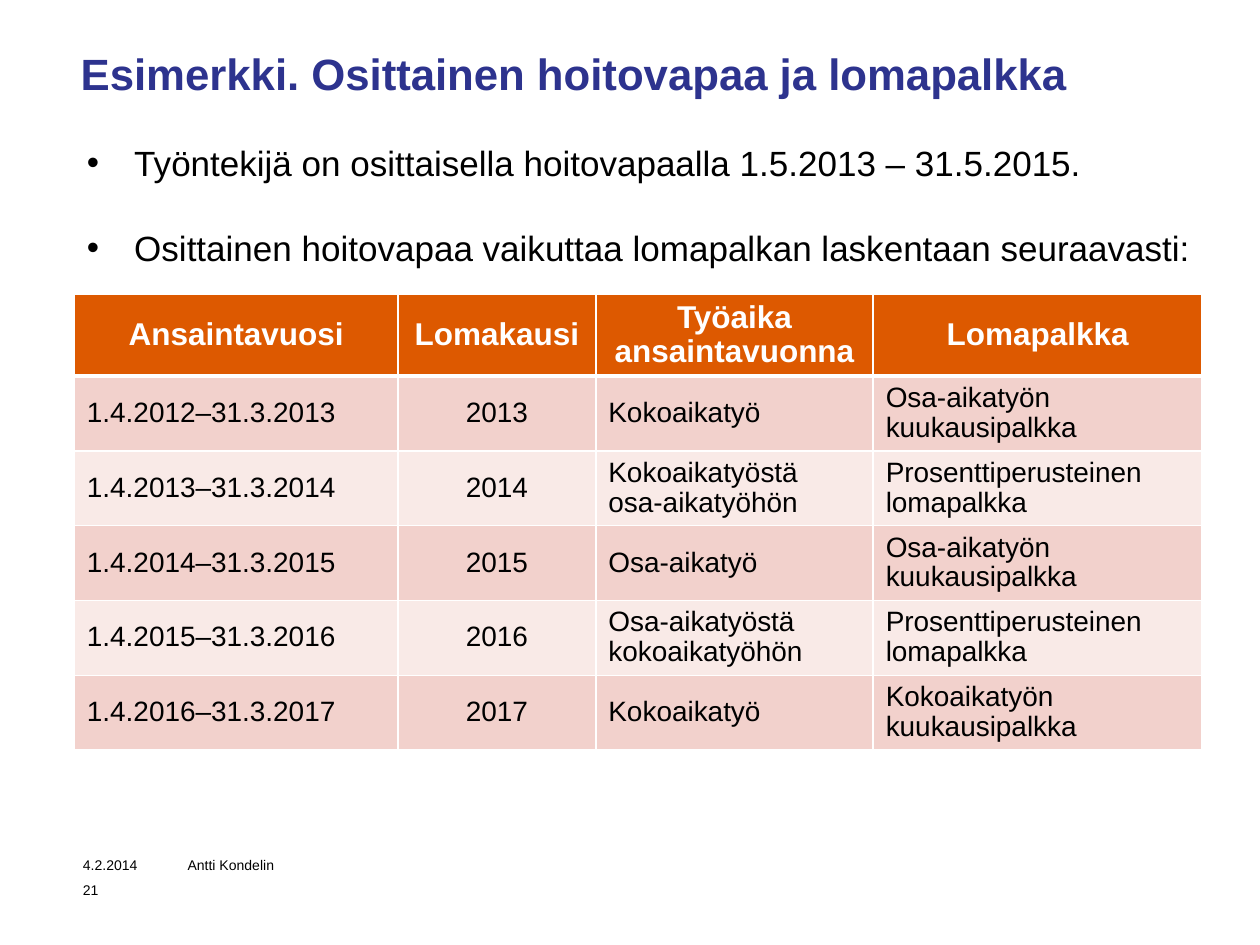
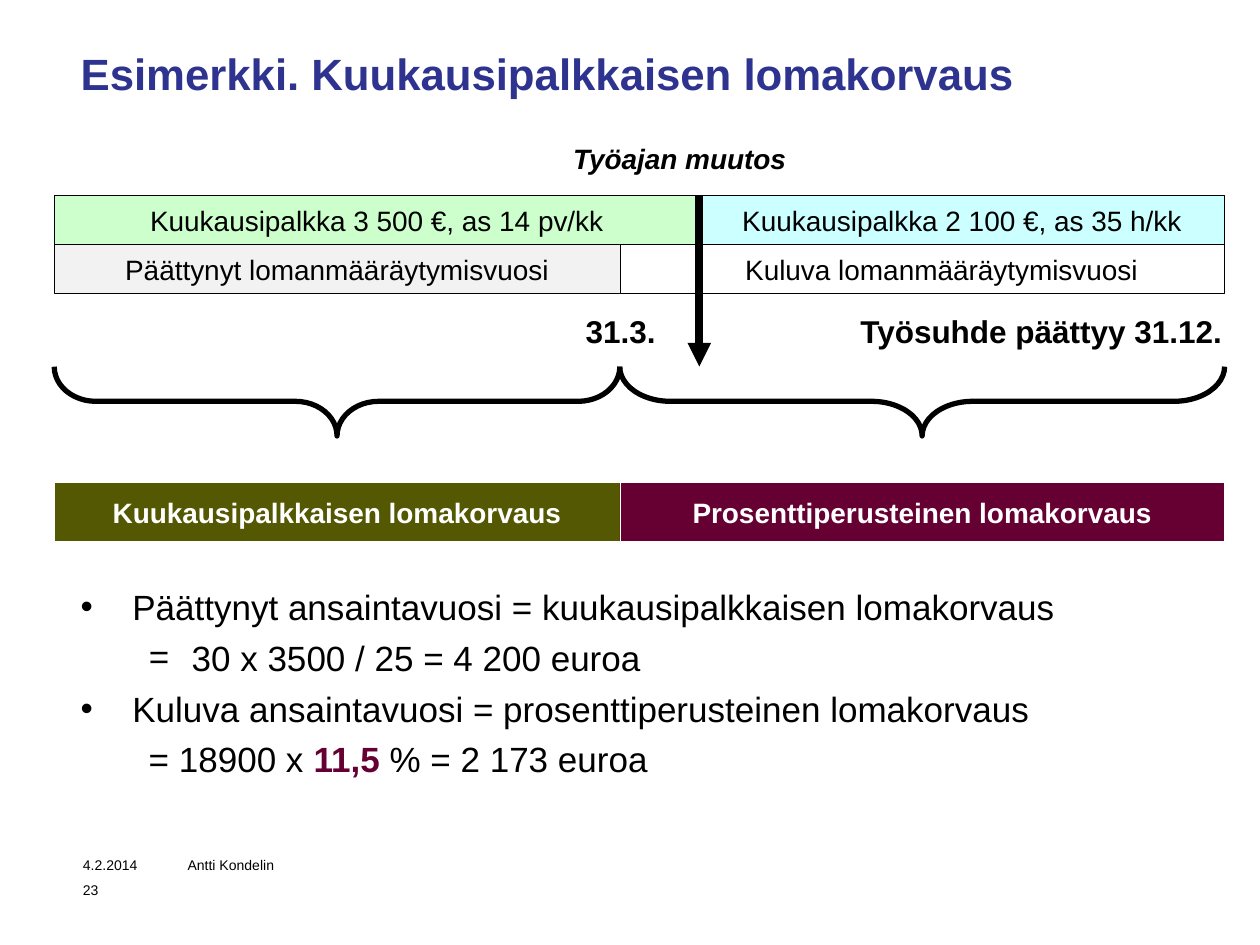
from dataclasses import dataclass
from lxml.etree import SubElement
from pptx import Presentation
from pptx.dml.color import RGBColor
from pptx.enum.shapes import MSO_CONNECTOR, MSO_SHAPE
from pptx.enum.text import MSO_ANCHOR, MSO_AUTO_SIZE, PP_ALIGN
from pptx.oxml import parse_xml
from pptx.oxml.ns import nsdecls, qn
from pptx.util import Pt

FONT = "Arial"
HUES = {
    "title": "2D338E", "ink": "000000", "white": "FFFFFF", "head": "DD5900",
    "odd": "F2D1CC", "even": "F9EAE7", "green": "CCFFCC", "cyan": "CCFFFF",
    "grey": "F2F2F2", "olive": "545802", "wine": "660033",
}
LEFT, SPLIT, CHANGE, RIGHT = 31, 354.2, 399.6, 699.8
BAR_TOP, BAR_HIGH = 111.6, 28.1
BRACE_TOP, BRACE_HIGH = 209.5, 39.6


@dataclass
class Box:
    left: float
    top: float
    width: float
    height: float

    def place(self) -> tuple:
        return Pt(self.left), Pt(self.top), Pt(self.width), Pt(self.height)


@dataclass
class Item:
    texts: list
    indent: float
    hang: float
    mark: str = ""
    level: int = 0
    before: float = 0


@dataclass
class Bar:
    text: str
    start: float
    end: float
    top: float
    high: float
    fill: str
    ink: str = "ink"
    line: str = "ink"
    bold: bool = False
    shift: float = 0


@dataclass
class Label:
    text: str
    box: Box
    size: float
    bold: bool = False
    italic: bool = False


@dataclass
class Brace:
    start: float
    end: float
    curve: float


def color(name: str) -> RGBColor:
    return RGBColor.from_string(HUES[name])


def write(para, text: str, *, size=16, hue="ink", bold=False, italic=False,
          align=PP_ALIGN.LEFT):
    para.alignment = align
    run = para.add_run()
    run.text = text
    font = run.font
    font.name, font.size, font.bold, font.italic = FONT, Pt(size), bold, italic
    font.color.rgb = color(hue)


def fit(frame, anchor=MSO_ANCHOR.TOP, shift=0):
    frame.word_wrap = True
    frame.auto_size = MSO_AUTO_SIZE.NONE
    frame.vertical_anchor = anchor
    frame.margin_left = Pt(7.2 + shift)
    frame.margin_right = Pt(7.2)
    frame.margin_top = frame.margin_bottom = Pt(3.6)


def move(shape, box: Box):
    shape.left, shape.top, shape.width, shape.height = box.place()


def add_label(slide, label: Label):
    frame = slide.shapes.add_textbox(*label.box.place()).text_frame
    fit(frame)
    write(frame.paragraphs[0], label.text, size=label.size, bold=label.bold,
          italic=label.italic)


def add_list(slide, box: Box, items: list):
    body = slide.placeholders[1]
    move(body, box)
    frame = body.text_frame
    fit(frame)
    for num, item in enumerate(items):
        para = frame.add_paragraph() if num else frame.paragraphs[0]
        para.level = item.level
        para.space_before = Pt(item.before)
        props = para._p.get_or_add_pPr()
        props.set("marL", str(Pt(item.indent)))
        props.set("indent", str(Pt(-item.hang)))
        if item.mark:
            SubElement(props, qn("a:buFont"), typeface=FONT)
            SubElement(props, qn("a:buChar"), char=item.mark)
        else:
            SubElement(props, qn("a:buNone"))
        for text, form in item.texts:
            write(para, text, size=20, **form)


def add_page(deck, title: str, number: str):
    slide = deck.slides.add_slide(deck.slide_layouts[1])
    head = slide.shapes.title
    move(head, Box(38.9, 23, 645, 61))
    fit(head.text_frame)
    write(head.text_frame.paragraphs[0], title, size=25, hue="title", bold=True)
    for text, left, top in (("4.2.2014", 40.3, 486),
                            ("Antti Kondelin", 100.1, 486),
                            (number, 40.3, 500.4)):
        add_label(slide, Label(text, Box(left, top, 100, 17.3), 8))
    return slide


def edge_cell(cell, widths: dict):
    props = cell._tc.get_or_add_tcPr()
    for spot, (side, width) in enumerate(widths.items()):
        props.insert(spot, parse_xml(
            f'<a:ln{side} {nsdecls("a")} w="{Pt(width)}"><a:solidFill>'
            f'<a:srgbClr val="{HUES["white"]}"/></a:solidFill></a:ln{side}>'))


def add_grid(slide, box: Box, widths: list, rows: list):
    table = slide.shapes.add_table(len(rows), len(widths), *box.place()).table
    table.horz_banding = False
    for col, width in zip(table.columns, widths):
        col.width = Pt(width)
    for r, row in enumerate(rows):
        head = r == 0
        table.rows[r].height = Pt(46.9 if head else 42.75)
        for c, text in enumerate(row):
            cell = table.cell(r, c)
            cell.vertical_anchor = MSO_ANCHOR.MIDDLE
            cell.fill.solid()
            cell.fill.fore_color.rgb = color(
                "head" if head else "odd" if r % 2 else "even")
            edge_cell(cell, {"L": 1, "R": 1, "T": 3 if r == 1 else 1,
                             "B": 3 if head else 1})
            frame = cell.text_frame
            for num, line in enumerate(text.split("\n")):
                para = frame.add_paragraph() if num else frame.paragraphs[0]
                para.line_spacing = 0.96
                write(para, line, size=18 if head else 16, bold=head,
                      hue="white" if head else "ink",
                      align=PP_ALIGN.CENTER if head or c == 1 else PP_ALIGN.LEFT)


def add_bar(slide, bar: Bar):
    box = Box(bar.start, bar.top, bar.end - bar.start, bar.high)
    shape = slide.shapes.add_shape(MSO_SHAPE.RECTANGLE, *box.place())
    shape.shadow.inherit = False
    shape.fill.solid()
    shape.fill.fore_color.rgb = color(bar.fill)
    shape.line.color.rgb = color(bar.line)
    shape.line.width = Pt(0.25)
    fit(shape.text_frame, MSO_ANCHOR.MIDDLE, bar.shift)
    write(shape.text_frame.paragraphs[0], bar.text, hue=bar.ink, bold=bar.bold,
          align=PP_ALIGN.CENTER)


def add_brace(slide, brace: Brace):
    span = brace.end - brace.start
    mid = (brace.start + brace.end) / 2
    box = Box(mid - BRACE_HIGH / 2, BRACE_TOP + (BRACE_HIGH - span) / 2,
              BRACE_HIGH, span)
    shape = slide.shapes.add_shape(MSO_SHAPE.LEFT_BRACE, *box.place())
    shape.rotation = 270
    shape.adjustments[0] = brace.curve
    shape.shadow.inherit = False
    shape.fill.background()
    shape.line.color.rgb = color("ink")
    shape.line.width = Pt(3)


def add_arrow(slide, left: float, top: float, end: float):
    arrow = slide.shapes.add_connector(
        MSO_CONNECTOR.STRAIGHT, Pt(left), Pt(top), Pt(left), Pt(end))
    arrow.line.color.rgb = color("ink")
    arrow.line.width = Pt(4.5)
    props = arrow._element.spPr
    SubElement(props.find(qn("a:ln")), qn("a:tailEnd"), type="triangle")
    SubElement(props, qn("a:effectLst"))


def leave_page(deck):
    slide = add_page(deck, "Esimerkki. Osittainen hoitovapaa ja lomapalkka", "21")
    add_list(slide, Box(42.5, 77, 650, 80), [
        Item([("Työntekijä on osittaisella hoitovapaalla 1.5.2013 – 31.5.2015.", {})],
             27, 27, "•"),
        Item([("Osittainen hoitovapaa vaikuttaa lomapalkan laskentaan seuraavasti:", {})],
             27, 27, "•", before=25),
    ])
    month = "Osa-aikatyön kuukausipalkka"
    share = "Prosenttiperusteinen lomapalkka"
    add_grid(slide, Box(42.5, 168, 645, 260), [185, 113, 158.5, 188], [
        ["Ansaintavuosi", "Lomakausi", "Työaika ansaintavuonna", "Lomapalkka"],
        ["1.4.2012–31.3.2013", "2013", "Kokoaikatyö", month],
        ["1.4.2013–31.3.2014", "2014", "Kokoaikatyöstä\nosa-aikatyöhön", share],
        ["1.4.2014–31.3.2015", "2015", "Osa-aikatyö", month],
        ["1.4.2015–31.3.2016", "2016", "Osa-aikatyöstä kokoaikatyöhön", share],
        ["1.4.2016–31.3.2017", "2017", "Kokoaikatyö", "Kokoaikatyön kuukausipalkka"],
    ])


def pay_page(deck):
    slide = add_page(deck, "Esimerkki. Kuukausipalkkaisen lomakorvaus", "23")
    add_list(slide, Box(38.9, 331, 645, 120), [
        Item([("Päättynyt ansaintavuosi = kuukausipalkkaisen lomakorvaus", {})],
             29.5, 29.5, "•"),
        Item([("30 x 3500 / 25 = 4 200 euroa", {})], 63.4, 24.5, "=", 1, 5),
        Item([("Kuluva ansaintavuosi = prosenttiperusteinen lomakorvaus", {})],
             29.5, 29.5, "•", before=5),
        Item([("= 18900 x ", {}), ("11,5 ", {"hue": "wine", "bold": True}),
              ("% = 2 173 euroa", {})], 38.9, 0, level=1, before=5),
    ])
    low = BAR_TOP + BAR_HIGH
    for bar in (
        Bar("Kuukausipalkka 3 500 €, as 14 pv/kk", LEFT, CHANGE, BAR_TOP, BAR_HIGH, "green"),
        Bar("Kuukausipalkka 2 100 €, as 35 h/kk", CHANGE, RIGHT, BAR_TOP, BAR_HIGH, "cyan"),
        Bar("Päättynyt lomanmääräytymisvuosi", LEFT, SPLIT, low, BAR_HIGH, "grey"),
        Bar("Kuluva lomanmääräytymisvuosi", SPLIT, RIGHT, low, BAR_HIGH, "white", shift=22),
        Bar("Kuukausipalkkaisen lomakorvaus", LEFT, SPLIT, 275.8, 33.8, "olive",
            "white", "white", True),
        Bar("Prosenttiperusteinen lomakorvaus", SPLIT, RIGHT, 275.8, 33.8, "wine",
            "white", "white", True),
    ):
        add_bar(slide, bar)
    for brace in (Brace(LEFT, SPLIT, 0.6), Brace(SPLIT, RIGHT, 0.73)):
        add_brace(slide, brace)
    add_arrow(slide, CHANGE, BAR_TOP, BRACE_TOP)
    for label in (
        Label("Työajan muutos", Box(320.4, 77.5, 152.6, 29), 16, True, True),
        Label("31.3.", Box(327.6, 175, 60, 29), 18, True),
        Label("Työsuhde päättyy 31.12.", Box(484.6, 175, 227, 29), 18, True),
    ):
        add_label(slide, label)


def main():
    deck = Presentation()
    deck.slide_width, deck.slide_height = Pt(720), Pt(540)
    leave_page(deck)
    pay_page(deck)
    deck.save("out.pptx")


if __name__ == "__main__":
    main()
